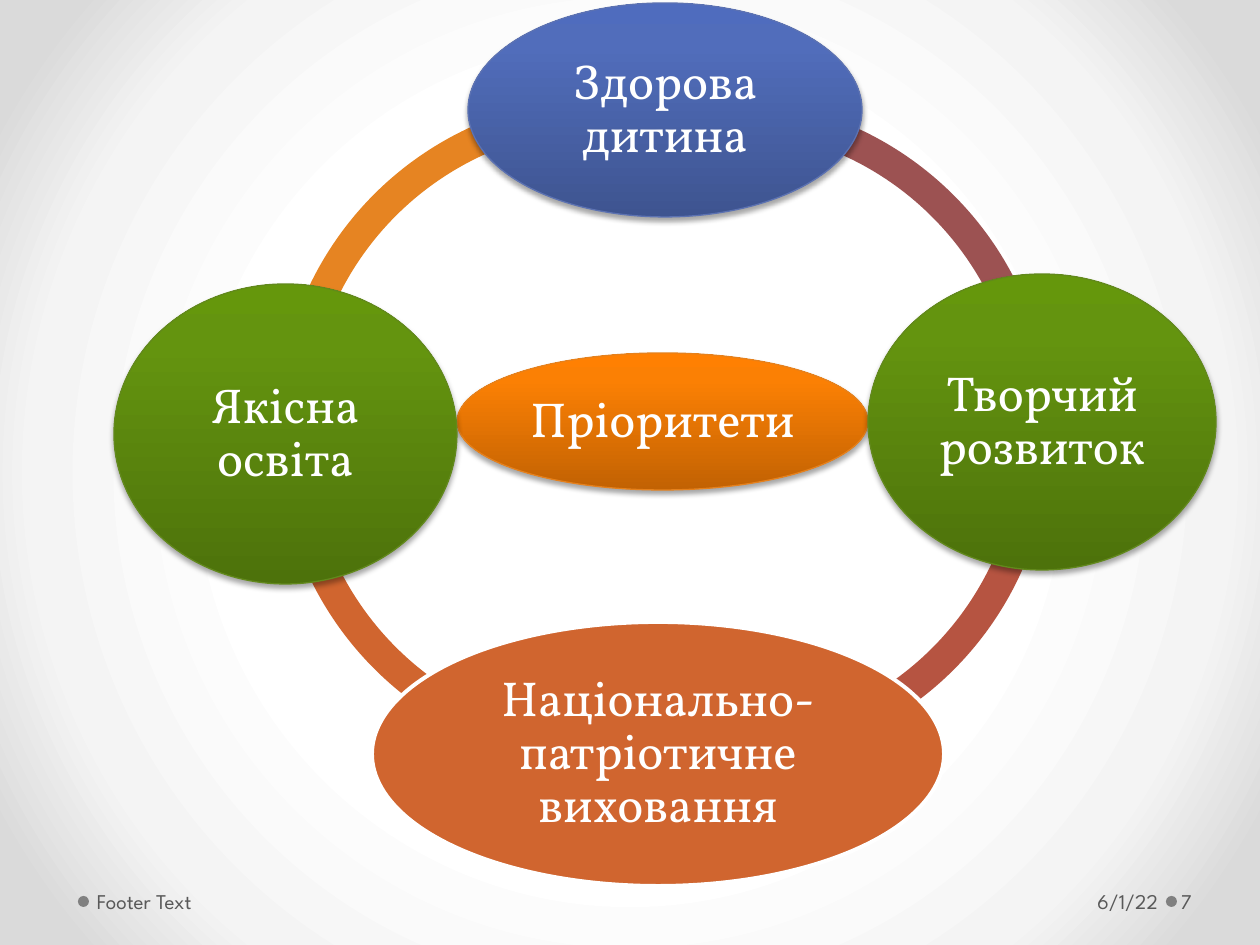
"""Build the slide of four priorities arranged on a ring around a centre."""
from dataclasses import dataclass
from typing import Optional

from lxml.etree import SubElement
from pptx import Presentation
from pptx.dml.color import RGBColor
from pptx.enum.shapes import MSO_SHAPE
from pptx.enum.text import MSO_ANCHOR, PP_ALIGN
from pptx.oxml.ns import qn
from pptx.util import Emu, Pt

PIXELS_PER_INCH = 126
COLORS = {
    "white": "FFFFFF", "footer": "595959", "dot": "808080",
    "amber": "E68422", "rust": "D0652F", "red": "B65441", "plum": "9C5252",
    "orange edge": "E6811C", "blue edge": "5C72B2", "green edge": "62891C",
    "shadow": "000000",
}
GRADIENTS = {
    "orange": [(0, "C26203"), (80, "FB8004"), (100, "FF8002")],
    "blue": [(0, "3E5490"), (80, "516DBB"), (100, "4F6CBE")],
    "green": [(0, "4D720B"), (80, "64940F"), (100, "65970C")],
    "background": [(50, "FFFFFF"), (76, "F4F4F4"), (92, "DADADA")],
}
RING_SIZE = 664
DOT_SIZE = 11
FOOTER_TOP, FOOTER_HEIGHT = 876, 50


@dataclass
class Arc:
    left: int
    top: int
    start: float
    end: float
    color: str


@dataclass
class Priority:
    text: str
    left: int
    top: int
    width: int
    height: int
    gradient: Optional[str] = None


@dataclass
class FooterItem:
    text: str
    left: int
    width: int
    align: PP_ALIGN
    left_inset: int
    right_inset: int


ARCS = [
    Arc(277, 97, 179.15, 279.9, "amber"),
    Arc(277, 102, 81.29, 179.87, "rust"),
    Arc(387, 103, 357.68, 100.69, "red"),
    Arc(387, 98, 260.53, 358.66, "plum"),
]
PRIORITIES = [
    Priority("Пріоритети", 457, 353, 411, 137, "orange"),
    Priority("Здорова дитина", 468, 3, 394, 214, "blue"),
    Priority("Творчий розвиток", 868, 274, 348, 296, "green"),
    Priority("Національно-патріотичне виховання", 372, 622, 572, 264),
    Priority("Якісна освіта", 114, 284, 343, 300, "green"),
]
FOOTER_ITEMS = [
    FooterItem("6/1/22", 877, 287, PP_ALIGN.RIGHT, 13, 6),
    FooterItem("Footer Text", 91, 392, PP_ALIGN.LEFT, 6, 13),
    FooterItem("7", 1177, 77, PP_ALIGN.LEFT, 4, 6),
]
DOTS = [(1166, 896), (78, 896)]


def px(value: int) -> Emu:
    """Turn pixels into EMU."""
    return Emu(round(value * 914400 / PIXELS_PER_INCH))


def rgb(name: str) -> RGBColor:
    """Look up a named colour."""
    return RGBColor.from_string(COLORS[name])


def write_gradient(gradient, name: str, radial: bool = False) -> None:
    """Fill a gradient element with the named stops."""
    for child in list(gradient):
        gradient.remove(child)
    stops = SubElement(gradient, qn("a:gsLst"))
    for position, color in GRADIENTS[name]:
        stop = SubElement(stops, qn("a:gs"), pos=str(position * 1000))
        SubElement(stop, qn("a:srgbClr"), val=color)
    if radial:
        path = SubElement(gradient, qn("a:path"), path="circle")
        SubElement(path, qn("a:fillToRect"), dict.fromkeys("ltrb", "50000"))
    else:
        SubElement(gradient, qn("a:lin"), ang=str(270 * 60000), scaled="0")


def add_plain_shape(slide, kind: MSO_SHAPE, box: tuple, color: str):
    """Add a solid shape without outline or shadow."""
    shape = slide.shapes.add_shape(kind, *map(px, box))
    shape.shadow.inherit = False
    shape.fill.solid()
    shape.fill.fore_color.rgb = rgb(color)
    shape.line.fill.background()
    return shape


def write_text(shape, text: str, font_format: dict, color: str, align: PP_ALIGN,
               insets: tuple, line_spacing: float) -> None:
    """Write one formatted paragraph into a shape."""
    text_frame = shape.text_frame
    margins = zip(("left", "top", "right", "bottom"), insets)
    frame_format = {f"margin_{side}": px(inset) for side, inset in margins}
    frame_format |= {"word_wrap": True, "vertical_anchor": MSO_ANCHOR.MIDDLE}
    for name, value in frame_format.items():
        setattr(text_frame, name, value)
    paragraph = text_frame.paragraphs[0]
    paragraph.alignment = align
    paragraph.line_spacing = line_spacing
    run = paragraph.add_run()
    run.text = text
    for name, value in font_format.items():
        setattr(run.font, name, value)
    run.font.color.rgb = rgb(color)


def add_arc(slide, arc: Arc) -> None:
    """Add one section of the ring, its angles given in degrees."""
    box = (arc.left, arc.top, RING_SIZE, RING_SIZE)
    shape = add_plain_shape(slide, MSO_SHAPE.BLOCK_ARC, box, arc.color)
    values = (arc.start * 0.6, arc.end * 0.6, 0.046)
    for index, value in enumerate(values):
        shape.adjustments[index] = value


def add_priority(slide, priority: Priority) -> None:
    """Add one labelled ellipse."""
    box = (priority.left, priority.top, priority.width, priority.height)
    shape = add_plain_shape(slide, MSO_SHAPE.OVAL, box, "rust")
    edge, edge_width = "white", 2.25
    if priority.gradient:
        edge, edge_width = f"{priority.gradient} edge", 0.75
        shape.fill.gradient()
        properties = shape._element.spPr
        write_gradient(properties.find(qn("a:gradFill")), priority.gradient)
        shadow = SubElement(properties.find(qn("a:effectLst")), qn("a:outerShdw"),
                            blurRad=str(Pt(3.1)), dist=str(Pt(1.8)),
                            dir=str(90 * 60000), rotWithShape="0")
        color = SubElement(shadow, qn("a:srgbClr"), val=COLORS["shadow"])
        SubElement(color, qn("a:alpha"), val="35000")
    shape.line.color.rgb = rgb(edge)
    shape.line.width = Pt(edge_width)
    write_text(shape, priority.text, {"name": "Vollkorn", "size": Pt(28)},
               "white", PP_ALIGN.CENTER, (5, 5, 5, 5), 0.9)


def add_footer_item(slide, item: FooterItem) -> None:
    """Add one text of the footer line."""
    box = (item.left, FOOTER_TOP, item.width, FOOTER_HEIGHT)
    shape = slide.shapes.add_textbox(*map(px, box))
    write_text(shape, item.text, {"name": "League Spartan", "size": Pt(12)},
               "footer", item.align, (item.left_inset, 6, item.right_inset, 6), 1.0)


def main() -> None:
    """Build and save the presentation."""
    presentation = Presentation()
    presentation.slide_width = px(1260)
    presentation.slide_height = px(945)
    slide = presentation.slides.add_slide(presentation.slide_layouts[6])
    slide.background.fill.gradient()
    gradient = slide._element.find(f".//{qn('p:bgPr')}/{qn('a:gradFill')}")
    write_gradient(gradient, "background", radial=True)
    for left, top in DOTS:
        add_plain_shape(slide, MSO_SHAPE.OVAL, (left, top, DOT_SIZE, DOT_SIZE), "dot")
    for item in FOOTER_ITEMS:
        add_footer_item(slide, item)
    for arc in ARCS:
        add_arc(slide, arc)
    for priority in PRIORITIES:
        add_priority(slide, priority)
    presentation.save("out.pptx")


if __name__ == "__main__":
    main()
